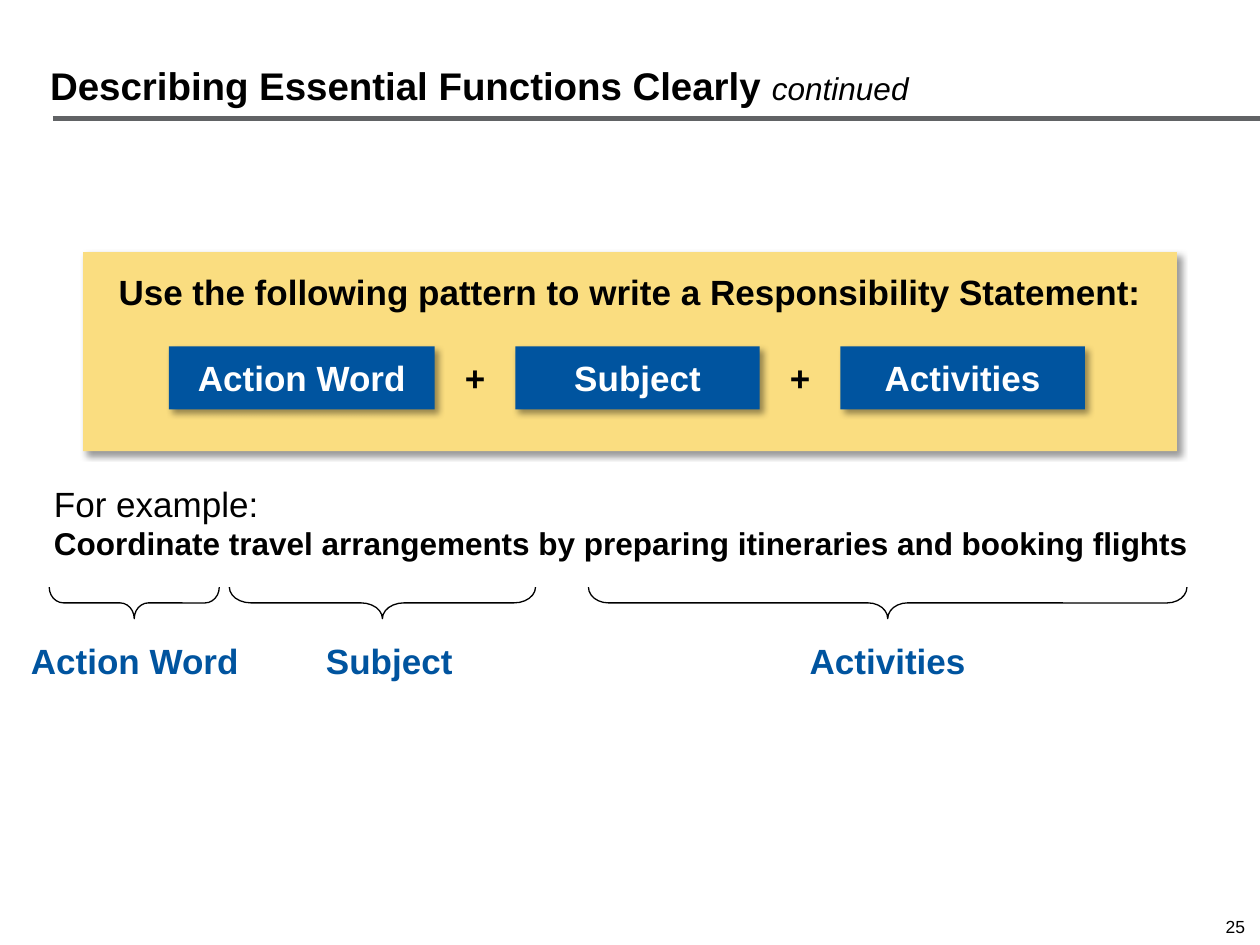
from pptx import Presentation
from pptx.dml.color import RGBColor
from pptx.enum.shapes import MSO_CONNECTOR as CONN, MSO_SHAPE as SHAPE
from pptx.enum.text import MSO_ANCHOR as ANCHOR, PP_ALIGN as ALIGN
from pptx.oxml import parse_xml
from pptx.oxml.ns import nsdecls
from pptx.util import Inches, Pt

BLACK, WHITE, BLUE, YELLOW, GREY = "000000", "FFFFFF", "00549F", "FADD80", "616365"

TITLE = [("Describing Essential Functions Clearly ", 22, True, False),
         ("continued", 18, False, True)]
PATTERN = "Use the following pattern to write a Responsibility Statement:"
EXAMPLE = [[("For example:", 20, False, False)],
           [("Coordinate travel arrangements by preparing itineraries and booking flights",
             18, True, False)]]
# term, box width, brace left, brace length, brace curve, label centre
TERMS = [("Action Word", 2.11, 0.39, 1.35, 0.451, 1.07),
         ("Subject", 1.94, 1.82, 2.43, 0.68, 3.09),
         ("Activities", 1.94, 4.67, 4.75, 0.626, 7.045)]
BOX_LEFT, BOX_TOP, BOX_H, BOX_GAP = 1.34, 2.75, 0.5, 0.64
BRACE_MID, BRACE_H = 4.785, 0.25
LABEL_TOP, LABEL_W, LABEL_H = 5.03, 1.86, 0.44
PLUS_W = 0.5


def rgb(color):
    return RGBColor.from_string(color)


def bold(text, size=20):
    return [[(text, size, True, False)]]


def write(sp, paras, color=BLACK, align=ALIGN.CENTER, anchor=ANCHOR.MIDDLE,
          wrap=False, spacing=None):
    tf = sp.text_frame
    tf.word_wrap = wrap
    tf.vertical_anchor = anchor
    for i, runs in enumerate(paras):
        p = tf.add_paragraph() if i else tf.paragraphs[0]
        p.alignment = align
        if spacing:
            p.line_spacing = spacing
        for text, size, is_bold, italic in runs:
            r = p.add_run()
            r.text = text
            r.font.name, r.font.size = "Arial", Pt(size)
            r.font.bold, r.font.italic = is_bold, italic
            r.font.color.rgb = rgb(color)


def add_text(s, box, paras, **style):
    sp = s.shapes.add_textbox(*map(Inches, box))
    write(sp, paras, **style)


def add_effects(sp, content=""):
    sp._element.spPr.append(parse_xml(
        f'<a:effectLst {nsdecls("a")}>{content}</a:effectLst>'))


def add_panel(s, box, fill):
    sp = s.shapes.add_shape(SHAPE.RECTANGLE, *map(Inches, box))
    sp.fill.solid()
    sp.fill.fore_color.rgb = rgb(fill)
    sp.line.fill.background()
    add_effects(sp, f'<a:outerShdw blurRad="{Pt(4)}" dist="{Pt(3)}" dir="2700000" '
                    'algn="tl" rotWithShape="0"><a:srgbClr val="000000">'
                    '<a:alpha val="40000"/></a:srgbClr></a:outerShdw>')
    return sp


def add_brace(s, left, length, curve):
    box = (left + (length - BRACE_H) / 2, BRACE_MID - length / 2, BRACE_H, length)
    sp = s.shapes.add_shape(SHAPE.RIGHT_BRACE, *map(Inches, box))
    sp.rotation = 90
    sp.adjustments[0], sp.adjustments[1] = curve, 0.5
    sp.fill.background()
    sp.line.color.rgb = rgb(BLACK)
    sp.line.width = Pt(0.75)
    sp.shadow.inherit = False


def main():
    prs = Presentation()
    prs.slide_width, prs.slide_height = Inches(10), Inches(7.5)
    s = prs.slides.add_slide(prs.slide_layouts[6])

    add_text(s, (9.38, 7.24, 0.6, 0.25), [[("25", 10, False, False)]],
             align=ALIGN.RIGHT, wrap=True, spacing=0.9)
    rule = s.shapes.add_connector(CONN.STRAIGHT, *map(Inches, (0.42, 0.94, 10, 0.94)))
    rule.line.color.rgb = rgb(GREY)
    rule.line.width = Pt(3)
    add_effects(rule)
    add_text(s, (0.3, 0.08, 9.53, 0.83), [TITLE], align=ALIGN.LEFT,
             anchor=ANCHOR.BOTTOM, wrap=True, spacing=0.9)

    panel = add_panel(s, (0.66, 2, 8.68, 1.58), YELLOW)
    panel.text_frame.margin_top = Inches(0.15)
    write(panel, bold(PATTERN), anchor=ANCHOR.TOP, wrap=True)
    add_text(s, (0.33, 3.78, 9.29, 0.86), EXAMPLE, align=ALIGN.LEFT, anchor=ANCHOR.TOP)

    left = BOX_LEFT
    for i, (term, width, brace_left, length, curve, centre) in enumerate(TERMS):
        if i:
            plus_left = left - (BOX_GAP + PLUS_W) / 2
            add_text(s, (plus_left, BOX_TOP, PLUS_W, BOX_H), bold("+"))
        write(add_panel(s, (left, BOX_TOP, width, BOX_H), BLUE), bold(term), color=WHITE)
        add_brace(s, brace_left, length, curve)
        add_text(s, (centre - LABEL_W / 2, LABEL_TOP, LABEL_W, LABEL_H), bold(term),
                 color=BLUE, anchor=ANCHOR.TOP)
        left += width + BOX_GAP

    prs.save("out.pptx")


if __name__ == "__main__":
    main()
